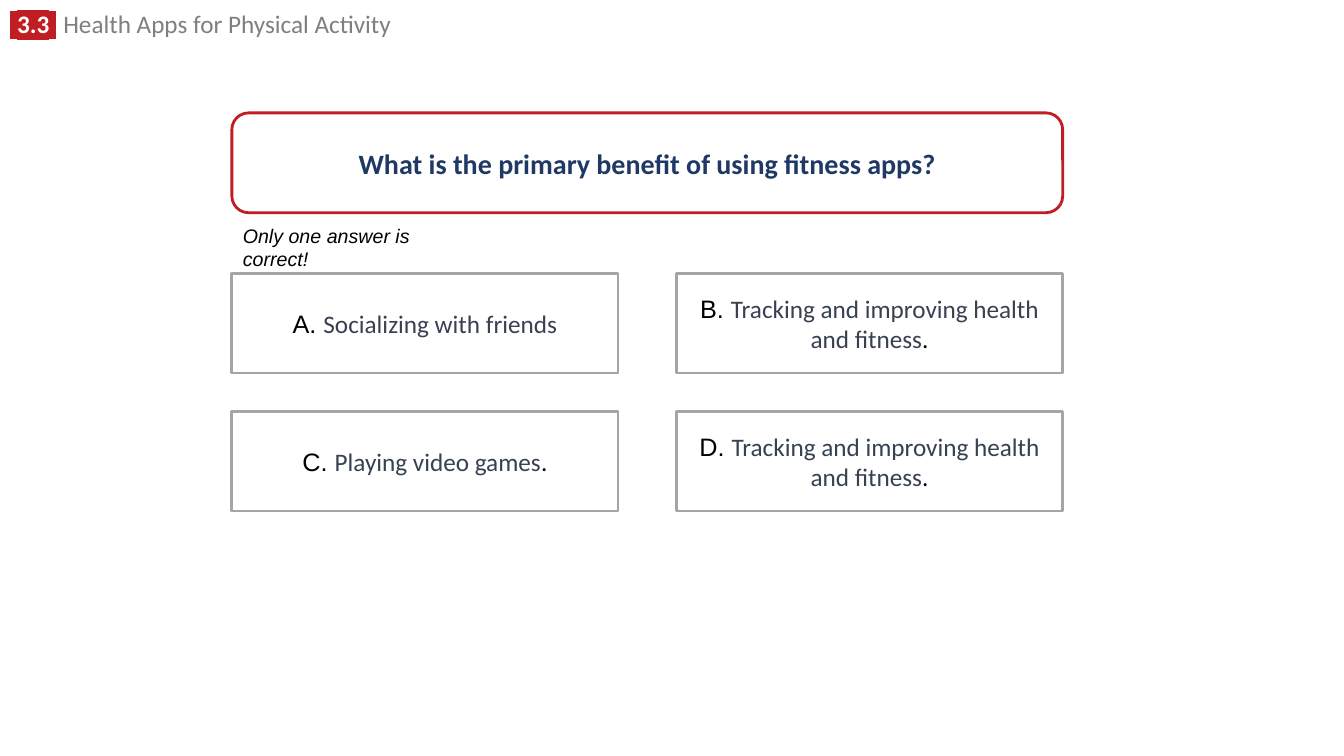
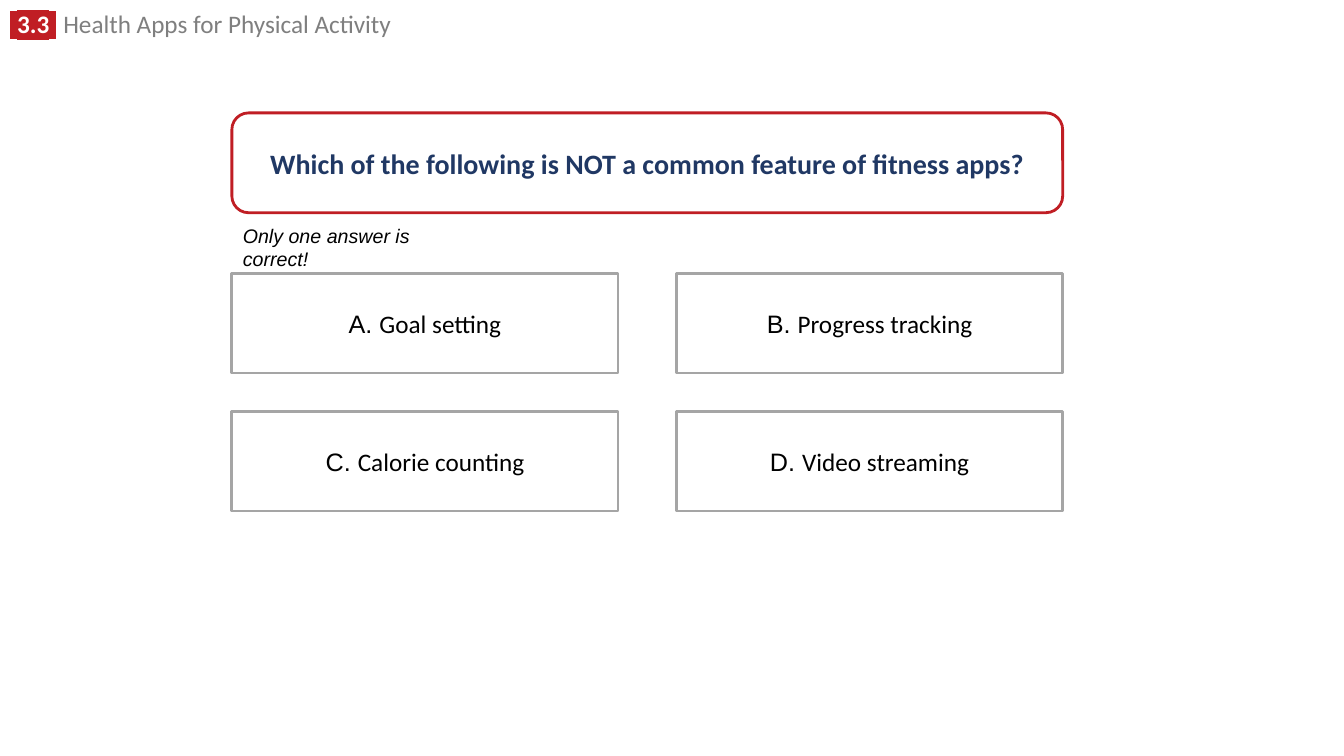
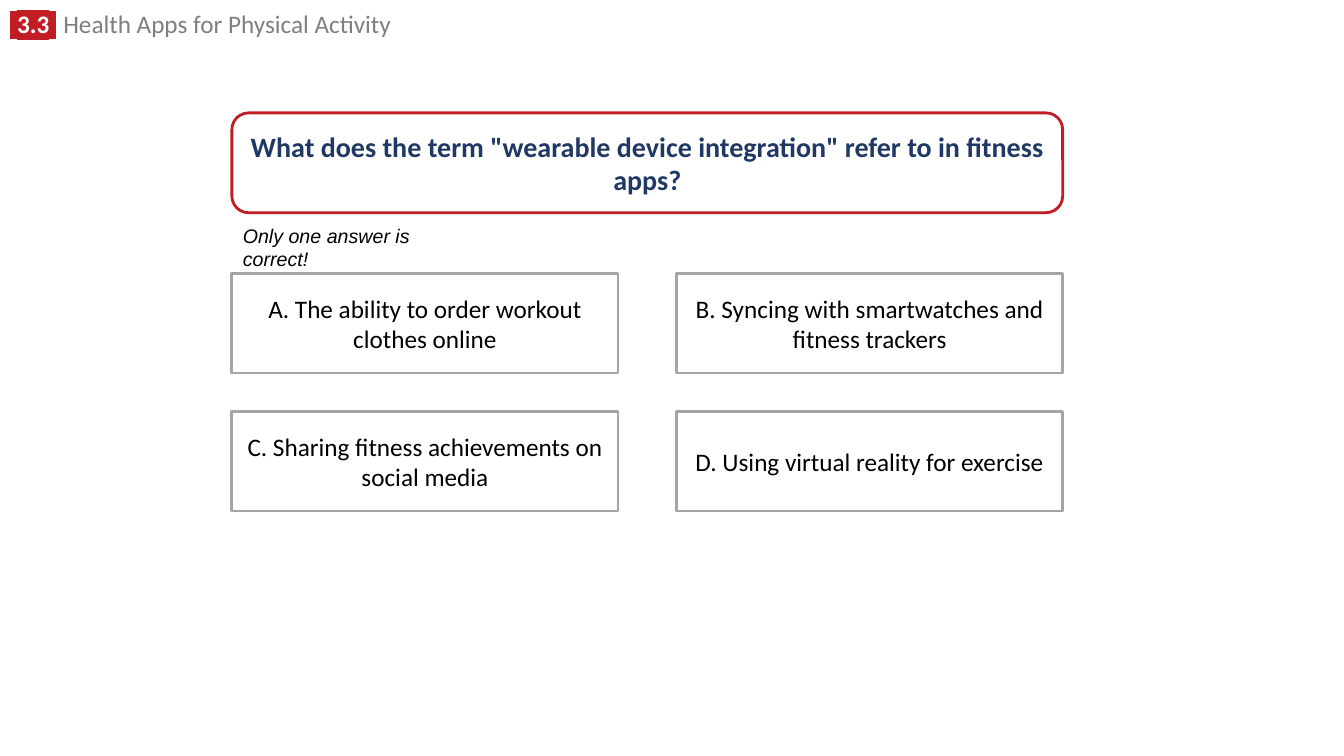
from lxml import etree
from pptx import Presentation
from pptx import util as u
from pptx.dml.color import RGBColor
from pptx.enum import shapes, text
from pptx.oxml.ns import qn

PX = 9144
RED, NAVY, GREY, SLATE = "C01E24", "203864", "7F7F7F", "374151"
WHITE, BLACK, BORDER = "FFFFFF", "000000", "A5A5A5"
SANS, BODY = "Arial", "Calibri"

LEFT, ANSWER_TOP = 230, 271
ANSWER_WIDTH, BOX_HEIGHT = 383, 99
COLUMN_STEP, ROW_STEP = 441, 137
QUESTION_WIDTH = COLUMN_STEP + ANSWER_WIDTH

QUIZ = [
    ("What is the primary benefit of using fitness apps?", SANS, SLATE, [
        ("Socializing with friends", ""),
        ("Tracking and improving health and fitness", "."),
        ("Playing video games", "."),
        ("Tracking and improving health and fitness", "."),
    ]),
    ("Which of the following is NOT a common feature of fitness apps?", SANS, BLACK, [
        ("Goal setting", ""),
        ("Progress tracking", ""),
        ("Calorie counting", ""),
        ("Video streaming", ""),
    ]),
    ('What does the term "wearable device integration" refer to in fitness apps?', BODY, BLACK, [
        ("The ability to order workout clothes online", ""),
        ("Syncing with smartwatches and fitness trackers", ""),
        ("Sharing fitness achievements on social media", ""),
        ("Using virtual reality for exercise", ""),
    ]),
]


def color(value):
    return RGBColor.from_string(value)


def px(*lengths):
    return [u.Emu(length * PX) for length in lengths]


def add_run(paragraph, words, font_name, size, hex_color, bold=False, italic=False, highlight=None):
    run = paragraph.add_run()
    run.text = words
    font = run.font
    font.size = u.Pt(size)
    font.bold, font.italic = bold, italic
    font.color.rgb = color(hex_color)
    if highlight:
        mark = etree.Element(qn("a:highlight"))
        etree.SubElement(mark, qn("a:srgbClr"), val=highlight)
        run.font._element.find(qn("a:solidFill")).addnext(mark)
    font.name = font_name


def set_frame(shape, anchor, alignment):
    frame = shape.text_frame
    frame.word_wrap = True
    frame.auto_size = text.MSO_AUTO_SIZE.NONE
    frame.vertical_anchor = anchor
    paragraph = frame.paragraphs[0]
    paragraph.alignment = alignment
    return paragraph


def add_title(slide):
    title = slide.shapes.title
    title.left, title.top, title.width, title.height = px(0, 9, 952, 35)
    paragraph = set_frame(title, text.MSO_ANCHOR.TOP, text.PP_ALIGN.LEFT)
    paragraph.line_spacing = 0.8
    for words, font_name in ((" ", SANS), ("3.3", BODY), (" ", SANS)):
        add_run(paragraph, words, font_name, 18, WHITE, bold=True, highlight=RED)
    add_run(paragraph, " ", SANS, 18, GREY)
    add_run(paragraph, "Health Apps for Physical Activity", BODY, 18, GREY)


def add_box(slide, kind, left, top, width, line_color):
    box = slide.shapes.add_shape(kind, *px(left, top, width, BOX_HEIGHT))
    box.shadow.inherit = False
    box.fill.solid()
    box.fill.fore_color.rgb = color(WHITE)
    box.line.color.rgb = color(line_color)
    box.line.width = u.Pt(2)
    return set_frame(box, text.MSO_ANCHOR.MIDDLE, text.PP_ALIGN.CENTER)


def add_question(slide, question):
    paragraph = add_box(slide, shapes.MSO_SHAPE.ROUNDED_RECTANGLE, LEFT, 112, QUESTION_WIDTH, RED)
    add_run(paragraph, question, BODY, 20, NAVY, bold=True)


def add_hint(slide):
    hint = slide.shapes.add_textbox(*px(LEFT + 1, 217, 236, 34))
    paragraph = set_frame(hint, text.MSO_ANCHOR.TOP, text.PP_ALIGN.LEFT)
    add_run(paragraph, "Only one answer is correct!", SANS, 14, BLACK, italic=True)


def add_answers(slide, answers, letter_font, answer_color):
    for index, (answer, ending) in enumerate(answers):
        row, column = divmod(index, 2)
        paragraph = add_box(slide, shapes.MSO_SHAPE.RECTANGLE, LEFT + column * COLUMN_STEP,
                            ANSWER_TOP + row * ROW_STEP, ANSWER_WIDTH, BORDER)
        add_run(paragraph, f"{'ABCD'[index]}. ", letter_font, 18, BLACK)
        add_run(paragraph, answer, BODY, 18, answer_color)
        if ending:
            add_run(paragraph, ending, BODY, 18, BLACK)


def main():
    presentation = Presentation()
    presentation.slide_width, presentation.slide_height = px(1333, 750)
    title_only = presentation.slide_layouts[5]
    for question, letter_font, answer_color, answers in QUIZ:
        slide = presentation.slides.add_slide(title_only)
        add_title(slide)
        add_question(slide, question)
        add_answers(slide, answers, letter_font, answer_color)
        add_hint(slide)
    presentation.save("out.pptx")


if __name__ == "__main__":
    main()
